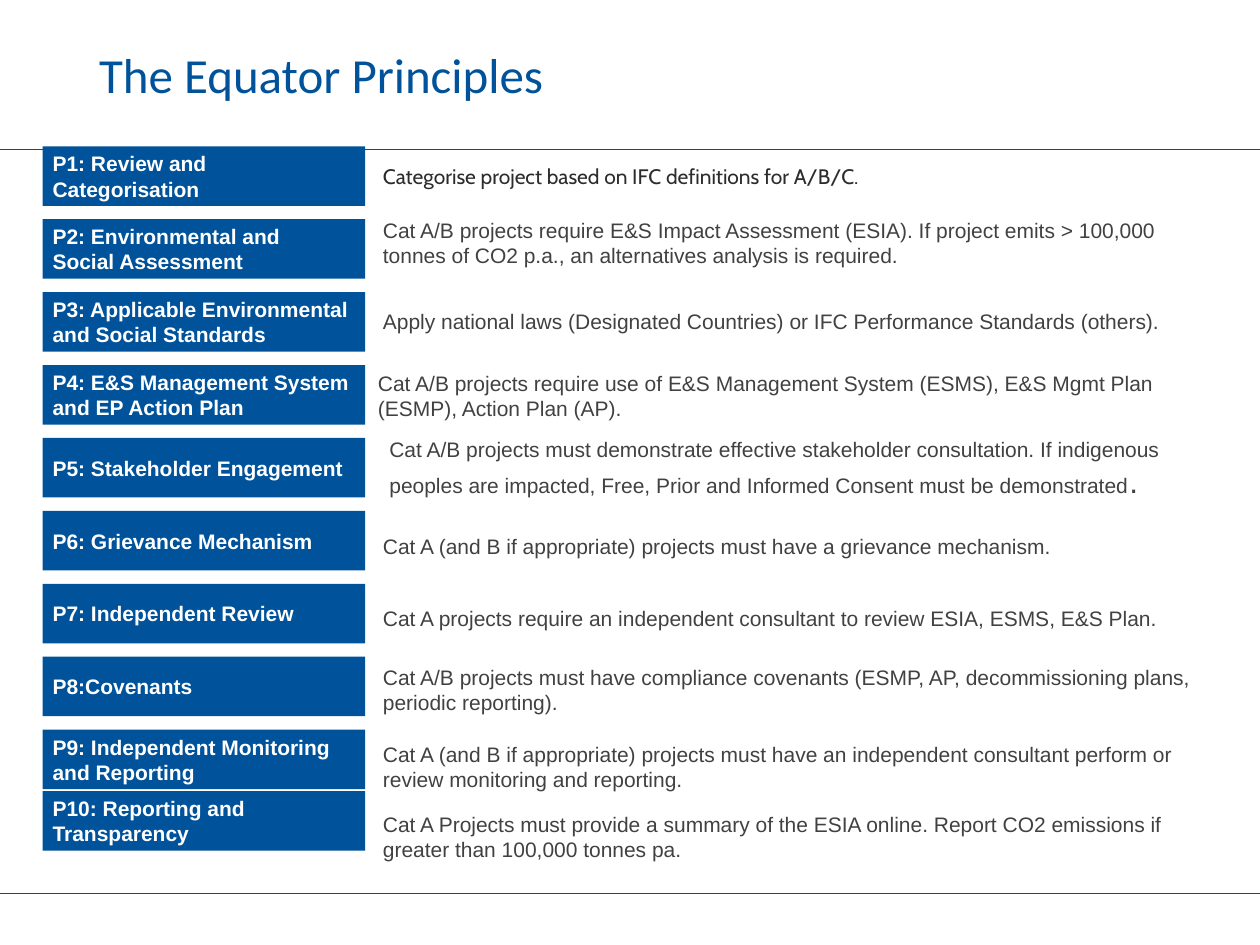
"""Build the Equator Principles slide: ten labelled principles with their requirements."""
from lxml.etree import SubElement
from pptx import Presentation
from pptx.dml.color import RGBColor as RGB
from pptx.enum.shapes import MSO_CONNECTOR as Connector, MSO_SHAPE as Shape
from pptx.enum.text import MSO_ANCHOR as Anchor, PP_ALIGN as Align
from pptx.oxml.ns import qn
from pptx.util import Cm, Pt

COLORS = {"blue": "00539B", "rule": "005198", "white": "FFFFFF", "ink": "2C2C2D", "grey": "414141"}
TITLE = "The Equator Principles"
TITLE_FONT = {"name": "Calibri", "size": Pt(28), "color": "blue"}
LABEL_FONT = {"name": "Arial", "size": Pt(12), "bold": True, "color": "white"}
BODY_FONT = {"name": "Arial", "size": Pt(12), "color": "grey"}
LEAD_FONT = {"name": "Cabin", "size": Pt(12), "color": "ink"}
STOP_FONT = {"name": "Arial", "size": Pt(18), "color": "grey"}

SINGLE = {"line_spacing": Pt(24)}
WRAPPED = {}
PRINCIPLES = [
    ("P1: Review and Categorisation", 7.72, 2.95, SINGLE,
     [("Categorise project based on IFC definitions for A/B/C.", LEAD_FONT)]),
    ("P2: Environmental and\vSocial Assessment", 7.72, 4.39, WRAPPED,
     [("Cat A/B projects require E&S Impact Assessment (ESIA). If project emits > 100,000 "
       "tonnes of CO2 p.a., an alternatives analysis is required.", BODY_FONT)]),
    ("P3: Applicable Environmental and Social Standards", 7.72, 5.89, SINGLE,
     [("Apply national laws (Designated Countries) or IFC Performance Standards (others).", BODY_FONT)]),
    ("P4: E&S Management System and EP Action Plan", 7.62, 7.47, WRAPPED,
     [("Cat A/B projects require use of E&S Management System (ESMS), E&S Mgmt Plan "
       "(ESMP), Action Plan (AP).", BODY_FONT)]),
    ("P5: Stakeholder Engagement", 7.85, 8.81, WRAPPED,
     [("Cat A/B projects must demonstrate effective stakeholder consultation. If indigenous "
       "peoples are impacted, Free, Prior and Informed Consent must be demonstrated", BODY_FONT),
      (".", STOP_FONT)]),
    ("P6: Grievance Mechanism", 7.72, 10.41, SINGLE,
     [("Cat A (and B if appropriate) projects must have a grievance mechanism.", BODY_FONT)]),
    ("P7: Independent Review", 7.72, 11.86, SINGLE,
     [("Cat A projects require an independent consultant to review ESIA, ESMS, E&S Plan.", BODY_FONT)]),
    ("P8:Covenants", 7.72, 13.39, WRAPPED,
     [("Cat A/B projects must have compliance covenants (ESMP, AP, decommissioning plans, "
       "periodic reporting).", BODY_FONT)]),
    ("P9: Independent Monitoring and Reporting", 7.72, 14.94, WRAPPED,
     [("Cat A (and B if appropriate) projects must have an independent consultant perform or "
       "review monitoring and reporting.", BODY_FONT)]),
    ("P10: Reporting and Transparency", 7.72, 16.36, WRAPPED,
     [("Cat A Projects must provide a summary of the ESIA online. Report CO2 emissions if "
       "greater than 100,000 tonnes pa.", BODY_FONT)]),
]
LABEL_LEFT, LABEL_TOP, LABEL_STEP, LAST_LABEL_TOP = 0.86, 2.95, 1.47, 15.95
LABEL_WIDTH, ROW_HEIGHT, BODY_WIDTH = 6.5, 1.2, 16.94
RULE_TOPS = (3, 18)


def rgb(color):
    return RGB.from_string(COLORS[color])


def apply(target, values):
    for name, value in values.items():
        if name == "color":
            target.color.rgb = rgb(value)
        else:
            setattr(target, name, value)


def write(frame, runs, inset=0, anchor=Anchor.TOP, paragraph_format=WRAPPED):
    sides = ("left", "top", "right", "bottom")
    apply(frame, {f"margin_{side}": Cm(inset) for side in sides})
    apply(frame, {"word_wrap": True, "vertical_anchor": anchor})
    paragraph = frame.paragraphs[0]
    apply(paragraph, {"alignment": Align.LEFT, **paragraph_format})
    for wording, font in runs:
        for index, line in enumerate(wording.split("\v")):
            if index:
                paragraph.add_line_break()
                line_break = paragraph._p.findall(qn("a:br"))[-1]
                SubElement(line_break, qn("a:rPr"), sz=str(int(font["size"].pt * 100)))
            run = paragraph.add_run()
            run.text = line
            apply(run.font, font)


def add_rule(slide, top, width):
    rule = slide.shapes.add_connector(Connector.STRAIGHT, 0, Cm(top), width, Cm(top))
    apply(rule.line, {"color": "rule", "width": Pt(0.25)})
    SubElement(rule._element.spPr, qn("a:effectLst"))


def add_label(slide, top, wording):
    label = slide.shapes.add_shape(
        Shape.RECTANGLE, Cm(LABEL_LEFT), Cm(top), Cm(LABEL_WIDTH), Cm(ROW_HEIGHT))
    label.shadow.inherit = False
    label.fill.solid()
    label.fill.fore_color.rgb = rgb("blue")
    label.line.fill.background()
    write(label.text_frame, [(wording, LABEL_FONT)], 0.2, Anchor.MIDDLE)


def main():
    deck = Presentation()
    apply(deck, {"slide_width": Cm(25.4), "slide_height": Cm(19.05)})
    slide = deck.slides.add_slide(deck.slide_layouts[6])
    for top in RULE_TOPS:
        add_rule(slide, top, deck.slide_width)
    title = slide.shapes.add_textbox(Cm(2), 0, Cm(16.4), Cm(3))
    write(title.text_frame, [(TITLE, TITLE_FONT)], anchor=Anchor.MIDDLE)
    label_tops = [LABEL_TOP + LABEL_STEP * row for row in range(len(PRINCIPLES) - 1)]
    label_tops.append(LAST_LABEL_TOP)
    for label_top, (label, left, top, spacing, requirement) in zip(label_tops, PRINCIPLES):
        add_label(slide, label_top, label)
        body = slide.shapes.add_textbox(Cm(left), Cm(top), Cm(BODY_WIDTH), Cm(ROW_HEIGHT))
        write(body.text_frame, requirement, paragraph_format=spacing)
    deck.save("out.pptx")


if __name__ == "__main__":
    main()
